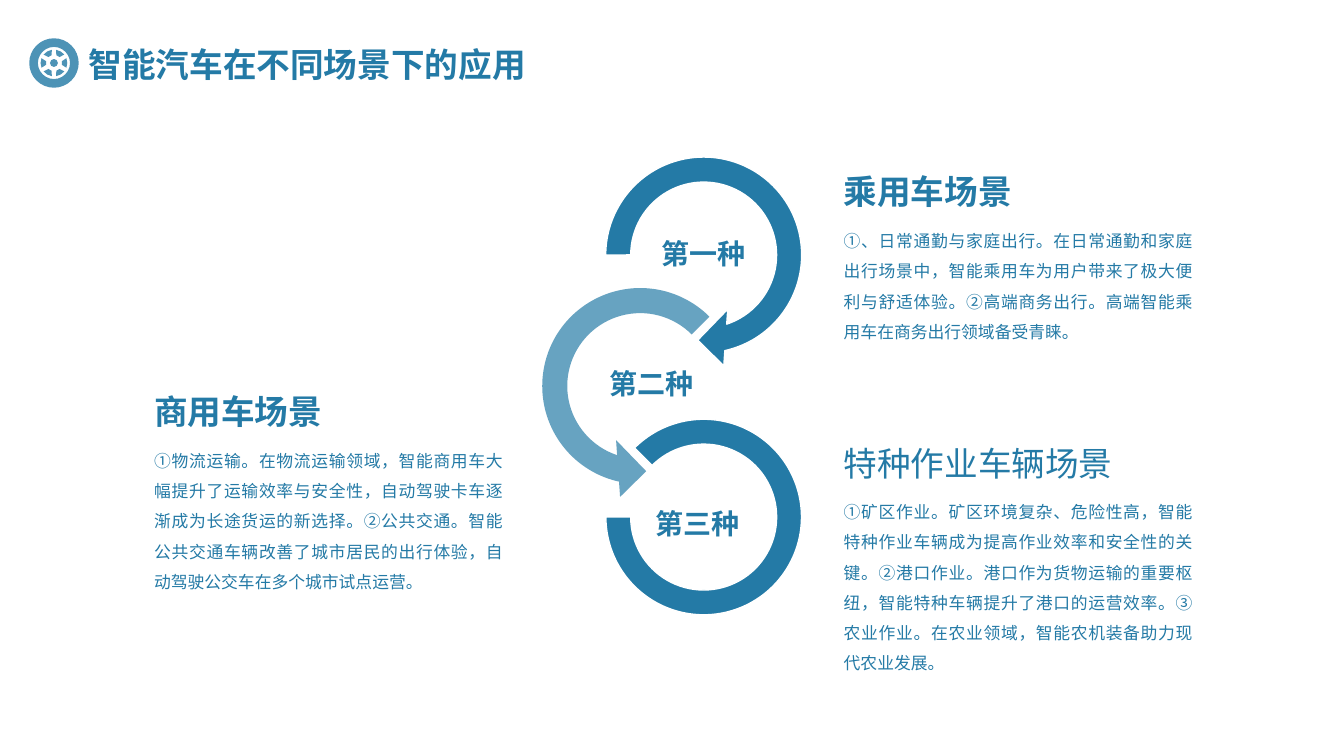
import math

import pptx
import pptx.dml.color
import pptx.enum.shapes
import pptx.enum.text
import pptx.oxml.ns
import pptx.util
from lxml import etree

SHAPES = pptx.enum.shapes.MSO_SHAPE
ALIGN = pptx.enum.text.PP_ALIGN
ANCHOR = pptx.enum.text.MSO_ANCHOR
AUTO_SIZE = pptx.enum.text.MSO_AUTO_SIZE
FONT = "Noto Sans CJK SC"
BLUE = "247AA6"
WHITE = "FFFFFF"
EMU_PER_PX = 9144

# preset, box, adjustments, opacity, outlined
RINGS = [
    (SHAPES.CIRCULAR_ARROW, (585, 140, 226, 226), (0.11, 11.42, 45, 108, 0.125), 100, True),
    (SHAPES.LEFT_CIRCULAR_ARROW, (522, 270, 226, 226), (0.11, 11.42, 63, 189, 0.125), 69, False),
    (SHAPES.BLOCK_ARC, (601, 416, 194, 194), (135, 108, 0.127), 100, True),
]
RING_LABELS = [("第一种", 635, 222), ("第二种", 584, 351), ("第三种", 629, 490)]

# left, top, heading, heading is bold, body, lines in body
SCENES = [
    (827, 165, "乘用车场景", True,
     "①、日常通勤与家庭出行。在日常通勤和家庭出行场景中，智能乘用车为用户带来了极大便利与舒适体验。"
     "②高端商务出行。高端智能乘用车在商务出行领域备受青睐。", 4),
    (827, 434, "特种作业车辆场景", False,
     "①矿区作业。矿区环境复杂、危险性高，智能特种作业车辆成为提高作业效率和安全性的关键。"
     "②港口作业。港口作为货物运输的重要枢纽，智能特种车辆提升了港口的运营效率。"
     "③农业作业。在农业领域，智能农机装备助力现代农业发展。", 6),
    (143, 383, "商用车场景", True,
     "①物流运输。在物流运输领域，智能商用车大幅提升了运输效率与安全性，自动驾驶卡车逐渐成为长途货运的新选择。"
     "②公共交通。智能公共交通车辆改善了城市居民的出行体验，自动驾驶公交车在多个城市试点运营。", 5),
]


def px(length):
    return pptx.util.Emu(round(length * EMU_PER_PX))


def rgb(code):
    return pptx.dml.color.RGBColor.from_string(code)


def paint(shape, color=None, opacity=100, outline=None):
    shape.shadow.inherit = False
    if color:
        shape.fill.solid()
        shape.fill.fore_color.rgb = rgb(color)
    else:
        shape.fill.background()
    if opacity < 100:
        solid = shape.fill._xPr.find(pptx.oxml.ns.qn("a:solidFill"))
        etree.SubElement(solid[0], pptx.oxml.ns.qn("a:alpha"), val=str(opacity * 1000))
    if outline:
        shape.line.color.rgb = rgb(outline)
        shape.line.width = pptx.util.Pt(1)
    else:
        shape.line.fill.background()


def write(holder, text, size=12, bold=False, align=ALIGN.LEFT, spacing=1.0,
          anchor=ANCHOR.TOP, inset=None, grow=True):
    frame = holder.text_frame
    frame.word_wrap = True
    frame.auto_size = AUTO_SIZE.SHAPE_TO_FIT_TEXT if grow else AUTO_SIZE.NONE
    frame.vertical_anchor = anchor
    if inset is not None:
        frame.margin_left = frame.margin_right = px(inset)
        frame.margin_top = frame.margin_bottom = px(inset)
    paragraph = frame.paragraphs[0]
    paragraph.alignment = align
    paragraph.line_spacing = spacing
    run = paragraph.add_run()
    run.text = text
    run.font.size = pptx.util.Pt(size)
    run.font.bold = bold
    run.font.color.rgb = rgb(BLUE)
    run.font.name = FONT
    etree.SubElement(run.font._element, pptx.oxml.ns.qn("a:ea"), typeface=FONT)


def add_text(slide, box, text, **style):
    write(slide.shapes.add_textbox(*map(px, box)), text, **style)


def add_outline(slide, first, *others):
    """One freeform made of closed contours, each a list of points in px."""
    contours = [[(px(x), px(y)) for x, y in contour] for contour in (first, *others)]
    builder = slide.shapes.build_freeform(*contours[0][0])
    builder.add_line_segments(contours[0][1:], close=True)
    for contour in contours[1:]:
        builder.move_to(*contour[0])
        builder.add_line_segments(contour[1:], close=True)
    return builder.convert_to_shape()


def arc(center, radius, start, end, steps):
    """Points along an arc, with angles in degrees."""
    angles = [math.radians(start + (end - start) * i / steps) for i in range(steps + 1)]
    return [(center[0] + radius * math.cos(a), center[1] + radius * math.sin(a))
            for a in angles]


def add_wheel(slide, left, top, size):
    radius = size / 2
    center = (left + radius, top + radius)
    contours = [arc(center, radius * share, 0, 360, steps)[:-1]
                for share, steps in ((1, 32), (0.65, 24), (0.16, 8))]
    for middle in range(0, 360, 60):
        contours.append(arc(center, radius * 0.54, middle - 21, middle + 21, 2)
                        + arc(center, radius * 0.33, middle + 13, middle - 13, 1))
    paint(add_outline(slide, *contours), BLUE, opacity=81)


def add_header(slide, left, top):
    title = slide.shapes.title
    title.left, title.top, title.width, title.height = map(px, (left + 49, top + 1, 551, 50))
    write(title, "智能汽车在不同场景下的应用", size=24, bold=True, align=ALIGN.JUSTIFY)
    add_wheel(slide, left, top, 49)


def add_ring_label(slide, text, left, top, width=125, height=63):
    right, bottom = left + width, top + height
    label = add_outline(slide, [(left, top), (right, top), (right, bottom), (left, bottom)])
    paint(label)
    write(label, text, size=20, bold=True, align=ALIGN.CENTER,
          spacing=0.9, anchor=ANCHOR.MIDDLE, inset=3, grow=False)


def add_ring_chain(slide):
    for preset, box, adjustments, opacity, outlined in RINGS:
        ring = slide.shapes.add_shape(preset, *map(px, box))
        for index, value in enumerate(adjustments):
            ring.adjustments[index] = value
        paint(ring, BLUE, opacity, WHITE if outlined else None)
    for label in RING_LABELS:
        add_ring_label(slide, *label)


def add_scene(slide, left, top, heading, bold, body, lines):
    add_text(slide, (left, top, 296, 50), heading, size=24, bold=bold)
    add_text(slide, (left, top + 49, 366, 30 * lines + 11), body,
             align=ALIGN.JUSTIFY, spacing=1.5)


def main():
    deck = pptx.Presentation()
    deck.slide_width, deck.slide_height = px(1333), px(750)
    slide = deck.slides.add_slide(deck.slide_layouts.get_by_name("Title Only"))
    add_ring_chain(slide)
    for scene in SCENES:
        add_scene(slide, *scene)
    add_header(slide, 29, 38)
    deck.save("out.pptx")


if __name__ == "__main__":
    main()
